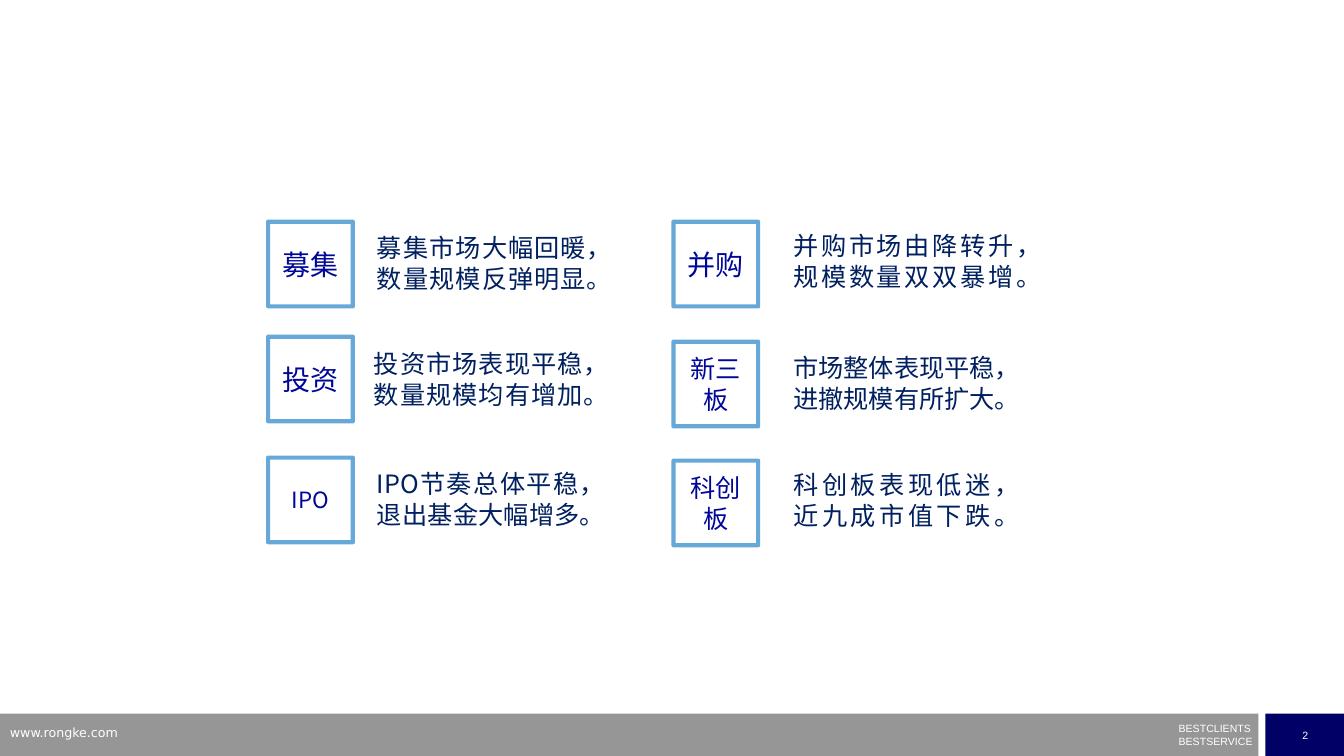
from lxml import etree
from pptx import Presentation
from pptx.dml.color import RGBColor
from pptx.enum.lang import MSO_LANGUAGE_ID
from pptx.enum.shapes import MSO_SHAPE
from pptx.enum.text import MSO_ANCHOR, MSO_AUTO_SIZE, PP_ALIGN
from pptx.oxml.ns import qn
from pptx.util import Inches, Pt

RECTANGLE = MSO_SHAPE.RECTANGLE
MIDDLE = MSO_ANCHOR.MIDDLE
GROW = MSO_AUTO_SIZE.SHAPE_TO_FIT_TEXT
LEFT, CENTER, JUSTIFY = PP_ALIGN.LEFT, PP_ALIGN.CENTER, PP_ALIGN.JUSTIFY
CHINESE = MSO_LANGUAGE_ID.SIMPLIFIED_CHINESE

CJK_FONT = "Noto Sans CJK SC"
TILE_SIZE = 0.84
NOTE_HEIGHT = 0.71

# label, label size, tile top, note left, note top, note width, note paragraphs
COLUMNS = [
    (2.66, [
        ("募集", 20, 2.2, 3.64, 2.26, 2.28, ["募集市场大幅回暖，数量规模反弹明显。"]),
        ("投资", 20, 3.34, 3.61, 3.41, 2.28, ["投资市场表现平稳，数量规模均有增加。"]),
        ("IPO", 16, 4.54, 3.64, 4.6, 2.21, ["IPO节奏总体平稳，", "退出基金大幅增多。"]),
    ]),
    (6.68, [
        ("并购", 20, 2.2, 7.77, 2.24, 2.41, ["并购市场由降转升，", "规模数量双双暴增。"]),
        ("新三板", 18, 3.39, 7.77, 3.45, 2.53, ["市场整体表现平稳，", "进撤规模有所扩大。"]),
        ("科创板", 18, 4.57, 7.77, 4.61, 2.19, ["科创板表现低迷，", "近九成市值下跌。"]),
    ]),
]
WEBSITE = ["www.rongke.com"]
SLOGAN = ["BESTCLIENTS", "BESTSERVICE"]
PAGE_NUMBER = ["2"]
FOOTER_TOP, FOOTER_HEIGHT = 7.08, 0.42


def color(value):
    return RGBColor.from_string(value)


def write(frame, lines, size, font_name, text_color, alignment):
    for index, line in enumerate(lines):
        paragraph = frame.add_paragraph() if index else frame.paragraphs[0]
        paragraph.alignment = alignment
        run = paragraph.add_run()
        run.text = line
        run.font.size = Pt(size)
        run.font.name = font_name
        run.font.color.rgb = color(text_color)
        if font_name == CJK_FONT:
            run.font.language_id = CHINESE
            properties = run.font._element
            properties.find(qn("a:latin")).addnext(
                etree.Element(qn("a:ea"), typeface=font_name))


def add_rectangle(slide, left, top, width, height, fill=None):
    shape = slide.shapes.add_shape(
        RECTANGLE, Inches(left), Inches(top), Inches(width), Inches(height))
    shape.shadow.inherit = False
    shape.line.fill.background()
    if fill:
        shape.fill.solid()
        shape.fill.fore_color.rgb = color(fill)
    else:
        shape.fill.background()
    shape.text_frame.vertical_anchor = MIDDLE
    return shape


def add_text(slide, left, top, width, height, *style):
    box = slide.shapes.add_textbox(
        Inches(left), Inches(top), Inches(width), Inches(height))
    box.text_frame.word_wrap = True
    write(box.text_frame, *style)
    return box.text_frame


def add_tile(slide, left, top, label, size):
    tile = add_rectangle(slide, left, top, TILE_SIZE, TILE_SIZE)
    tile.line.color.rgb = color("0070C0")
    tile.line.width = Pt(3)
    line_color = tile.line._ln.find(".//" + qn("a:srgbClr"))
    etree.SubElement(line_color, qn("a:alpha"), val="60000")
    tile.text_frame.word_wrap = True
    write(tile.text_frame, [label], size, CJK_FONT, "000798", CENTER)


def add_footer(slide):
    add_rectangle(slide, 0, FOOTER_TOP, 12.48, FOOTER_HEIGHT, "969696")
    page = add_rectangle(slide, 12.55, FOOTER_TOP, 0.79, FOOTER_HEIGHT, "000066")
    page.text_frame.word_wrap = False
    write(page.text_frame, PAGE_NUMBER, 7.5, "Arial", "FFFFFF", CENTER)
    slogan = add_text(slide, 11.69, 7.22, 0.76, 0.2,
                      SLOGAN, 7.5, "Arial", "FFFFFF", LEFT)
    slogan.auto_size = GROW
    slogan.margin_left = slogan.margin_right = 0
    slogan.margin_top = slogan.margin_bottom = 0
    for index, paragraph in enumerate(slogan.paragraphs):
        paragraph.line_spacing = 0.5
        if index:
            paragraph.space_before = Pt(4.3)
    add_text(slide, 0, 7.14, 3.2, 0.26, WEBSITE, 9, "DejaVu Sans", "FFFFFF", LEFT)


def main():
    presentation = Presentation()
    presentation.slide_width = Inches(13.33)
    presentation.slide_height = Inches(7.5)
    slide = presentation.slides.add_slide(presentation.slide_layouts[6])
    add_footer(slide)
    for tile_left, topics in COLUMNS:
        for label, size, tile_top, note_left, note_top, note_width, note in topics:
            add_tile(slide, tile_left, tile_top, label, size)
            frame = add_text(slide, note_left, note_top, note_width, NOTE_HEIGHT,
                             note, 18, CJK_FONT, "002060", JUSTIFY)
            frame.auto_size = GROW
    presentation.save("out.pptx")


if __name__ == "__main__":
    main()
